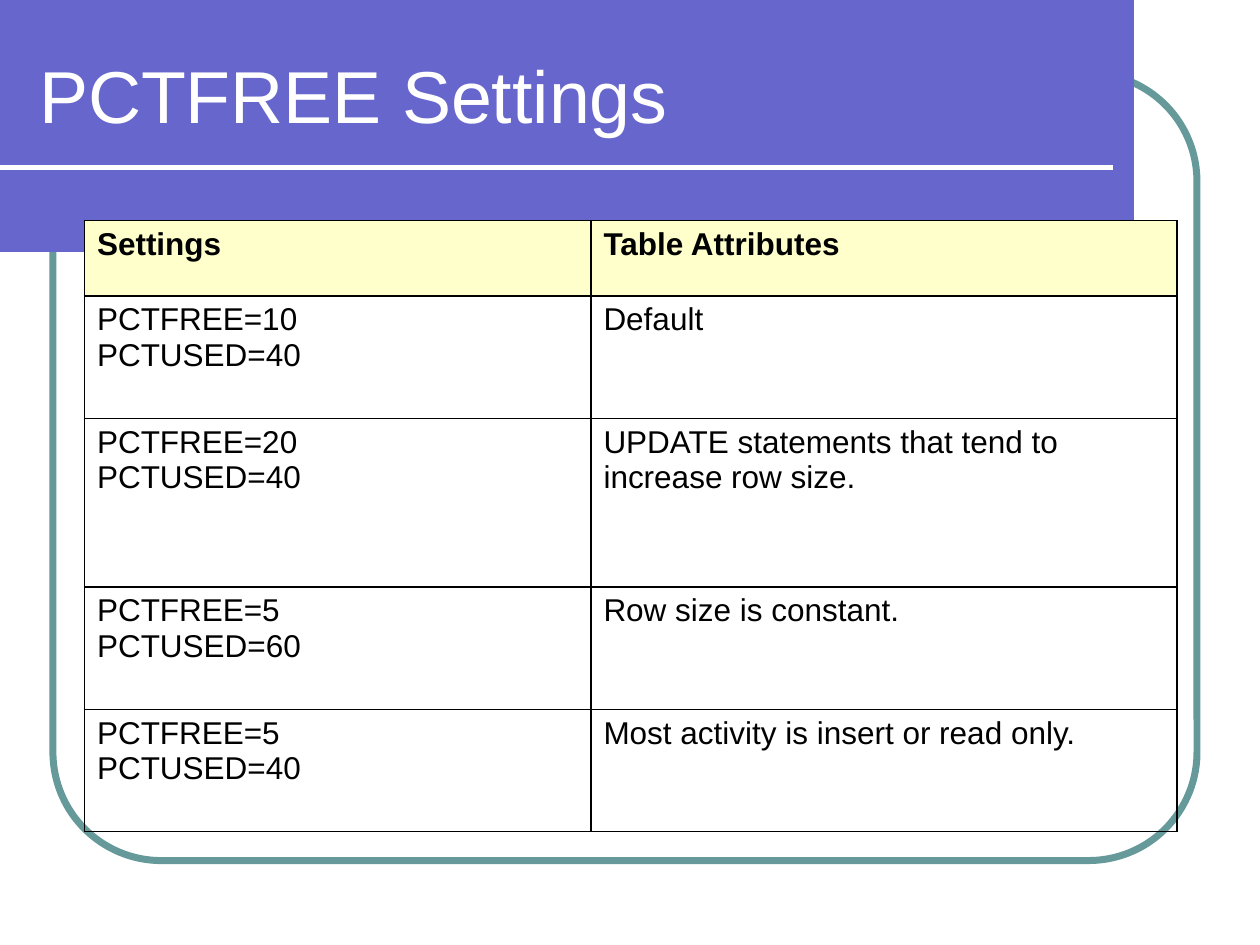
from dataclasses import dataclass
from math import cos, pi, sin

from lxml.etree import SubElement
from pptx import Presentation
from pptx.dml.color import RGBColor as Rgb
from pptx.enum.shapes import MSO_CONNECTOR as Conn, MSO_SHAPE as Kind
from pptx.enum.text import MSO_ANCHOR as Anchor, PP_ALIGN as Align
from pptx.oxml.ns import qn
from pptx.util import Inches, Pt


@dataclass(frozen=True)
class Theme:
    font: str = "Arial"
    band: str = "6666CC"
    frame: str = "669999"
    head: str = "FFFFCC"
    light: str = "FFFFFF"
    dark: str = "000000"
    title: int = 42
    body: int = 18


@dataclass(frozen=True)
class Row:
    left: str
    right: str
    height: float
    head: bool = False


@dataclass(frozen=True)
class Box:
    x: float
    y: float
    w: float
    h: float

    def place(self) -> list:
        return [Inches(v) for v in (self.x, self.y, self.w, self.h)]


LOOK = Theme()
COLS = (4.02, 4.65)
ROWS = (
    Row("Settings", "Table Attributes", 0.6, head=True),
    Row("PCTFREE=10\nPCTUSED=40", "Default", 0.97),
    Row("PCTFREE=20\nPCTUSED=40",
        "UPDATE statements that tend to increase row size.", 1.34),
    Row("PCTFREE=5\nPCTUSED=60", "Row size is constant.", 0.97),
    Row("PCTFREE=5\nPCTUSED=40", "Most activity is insert or read only.", 0.97),
)


def style(frame, size: int, color: str, bold: bool = False) -> None:
    for para in frame.paragraphs:
        para.alignment = Align.LEFT
        for run in para.runs:
            font = run.font
            font.name, font.size, font.bold = LOOK.font, Pt(size), bold
            font.color.rgb = Rgb.from_string(color)


def stroke(line, color: str, width: float) -> None:
    line.color.rgb = Rgb.from_string(color)
    line.width = Pt(width)


def add_frame(slide, box: Box, radius: float) -> None:
    shape = slide.shapes.add_shape(Kind.ROUNDED_RECTANGLE, *box.place())
    shape.adjustments[0] = radius / min(box.w, box.h)
    shape.shadow.inherit = False
    shape.fill.background()
    stroke(shape.line, LOOK.frame, 4)


def add_band(slide, box: Box, steps: int = 60) -> None:
    """Draw a band with a half-round right end."""
    r = box.h / 2
    cx, cy = box.x + box.w - r, box.y + r
    turns = [pi * i / steps - pi / 2 for i in range(steps + 1)]
    arc = [(cx + r * cos(t), cy + r * sin(t)) for t in turns]
    path = slide.shapes.build_freeform(box.x, box.y, scale=Inches(1))
    path.add_line_segments(arc + [(box.x, box.y + box.h)], close=True)
    shape = path.convert_to_shape()
    shape.shadow.inherit = False
    shape.fill.solid()
    shape.fill.fore_color.rgb = Rgb.from_string(LOOK.band)
    shape.line.fill.background()


def add_rule(slide, y: float, width: float) -> None:
    line = slide.shapes.add_connector(
        Conn.STRAIGHT, 0, Inches(y), Inches(width), Inches(y))
    stroke(line.line, LOOK.light, 3)
    SubElement(line._element.spPr, qn("a:effectLst"))


def set_title(slide, text: str, box: Box) -> None:
    title = slide.shapes.title
    title.left, title.top, title.width, title.height = box.place()
    title.text_frame.text = text
    title.text_frame.vertical_anchor = Anchor.MIDDLE
    style(title.text_frame, LOOK.title, LOOK.light)
    slide.shapes._spTree.append(title._element)  # bring to front


def add_edges(cell) -> None:
    props = cell._tc.get_or_add_tcPr()
    for side in "LRTB":
        edge = SubElement(props, qn(f"a:ln{side}"), w=str(Pt(1)))
        fill = SubElement(edge, qn("a:solidFill"))
        SubElement(fill, qn("a:srgbClr"), val=LOOK.dark)


def fill_cell(cell, text: str, head: bool) -> None:
    cell.text_frame.text = text
    style(cell.text_frame, LOOK.body, LOOK.dark, head)
    add_edges(cell)
    if head:
        cell.fill.solid()
        cell.fill.fore_color.rgb = Rgb.from_string(LOOK.head)
    else:
        cell.fill.background()


def add_grid(slide, x: float, y: float) -> None:
    box = Box(x, y, sum(COLS), sum(row.height for row in ROWS))
    table = slide.shapes.add_table(len(ROWS), len(COLS), *box.place()).table
    table.first_row = table.horz_banding = False
    for col, width in zip(table.columns, COLS):
        col.width = Inches(width)
    for i, row in enumerate(ROWS):
        table.rows[i].height = Inches(row.height)
        for j, text in enumerate((row.left, row.right)):
            fill_cell(table.cell(i, j), text, row.head)


def main() -> None:
    deck = Presentation()
    deck.slide_width, deck.slide_height = Inches(10), Inches(7.5)
    slide = deck.slides.add_slide(deck.slide_layouts[5])

    # Backdrop
    add_frame(slide, Box(0.42, 0.58, 9.08, 6.25), radius=0.86)
    add_band(slide, Box(0, 0.17, 9.33, 1.33))
    add_rule(slide, y=1.33, width=8.83)

    # Content
    set_title(slide, "PCTFREE Settings", Box(0.21, 0.25, 8.77, 1))
    add_grid(slide, x=0.67, y=1.75)
    deck.save("out.pptx")


if __name__ == "__main__":
    main()
